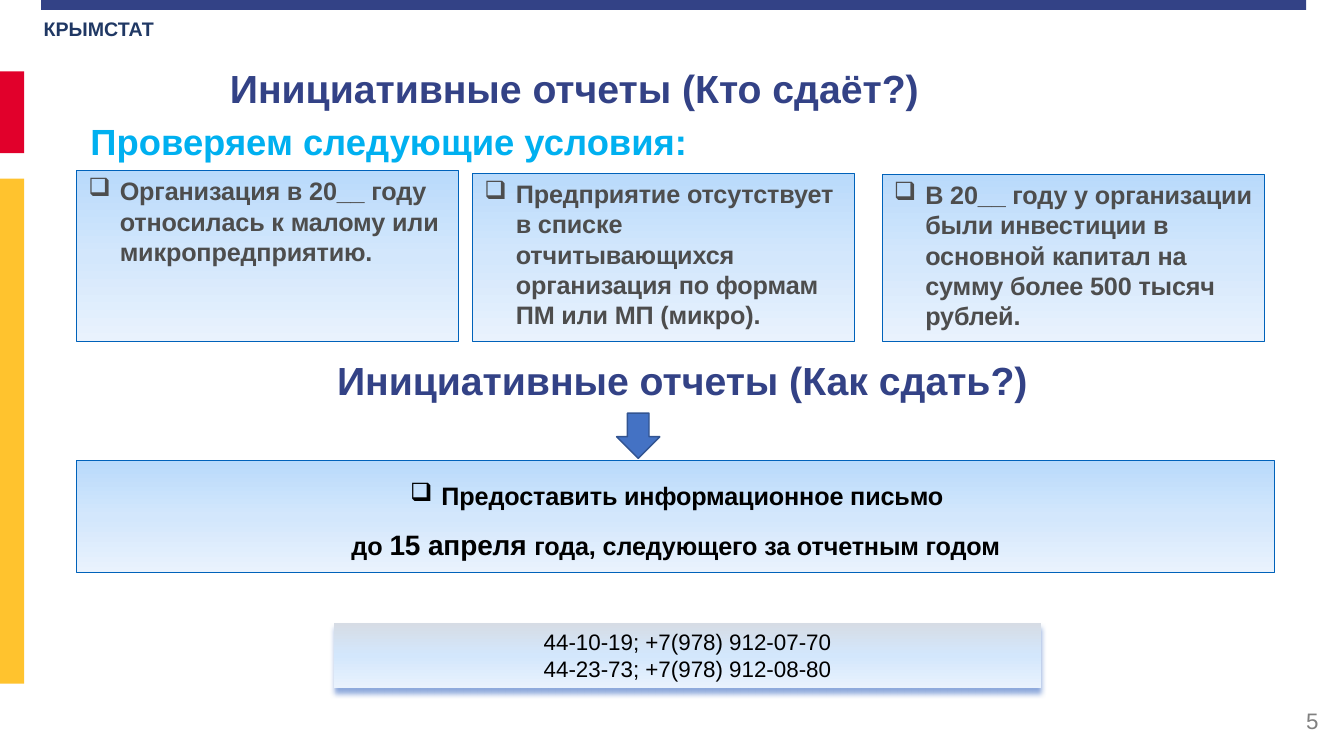
from copy import deepcopy

from pptx import Presentation
from pptx import util as u
from pptx.dml.color import RGBColor
from pptx.enum import shapes, text
from pptx.oxml import parse_xml
from pptx.oxml.ns import nsdecls, qn

NAVY, CARD = "334286", ("B9DAFB", "D3E7FC", "E9F2FD")
CONDITIONS = [
    (1.93, 4.3, "Организация в 20__ году относилась к малому или микропредприятию."),
    (11.91, 4.37, "Предприятие отсутствует в списке отчитывающихся "
                  "организация по формам ПМ или МП (микро)."),
    (22.23, 4.4, "В 20__ году у организации были инвестиции в основной капитал "
                 "на сумму более 500 тысяч рублей."),
]
CARD_WIDTH, CARD_BOTTOM = 9.63, 8.6


def rgb(code):
    """Return the colour for a hex string."""
    return RGBColor.from_string(code)


def place(box):
    """Turn a left, top, width, height box in centimetres into lengths."""
    return [u.Cm(length) for length in box]


def style(font, size, color, bold=True):
    """Set the common Arial look on a font."""
    font.name, font.size, font.bold = "Arial", u.Pt(size), bold
    font.color.rgb = rgb(color)


def write(frame, lines, size, color, bold=True, align=text.PP_ALIGN.LEFT,
          anchor=text.MSO_ANCHOR.TOP):
    """Fill a text frame with equally styled lines."""
    frame.word_wrap = True
    frame.auto_size = text.MSO_AUTO_SIZE.NONE
    frame.vertical_anchor = anchor
    frame.text = "\n".join(lines)
    for line in frame.paragraphs:
        line.alignment = align
        style(line.font, size, color, bold)


def add_block(slide, box, fill, kind=shapes.MSO_SHAPE.RECTANGLE, line=None, width=0.75):
    """Add a shape with a plain colour or a three-stop downward gradient."""
    block = slide.shapes.add_shape(kind, *place(box))
    block.shadow.inherit = False
    if isinstance(fill, str):
        block.fill.solid()
        block.fill.fore_color.rgb = rgb(fill)
    else:
        block.fill.gradient()
        block.fill.gradient_angle = 270
        stops = block._element.spPr.find(qn("a:gradFill")).find(qn("a:gsLst"))
        stops.insert(1, deepcopy(stops[0]))
        for stop, color, position in zip(block.fill.gradient_stops, fill, (0, 0.5, 1)):
            stop.color.rgb, stop.position = rgb(color), position
    if line:
        block.line.color.rgb = rgb(line)
        block.line.width = u.Pt(width)
    else:
        block.line.fill.background()
    return block


def add_label(slide, box, words, size, color, **options):
    """Add a one-line text box."""
    label = slide.shapes.add_textbox(*place(box))
    write(label.text_frame, [words], size, color, **options)


def add_bullet(paragraph):
    """Give a paragraph a checkbox bullet with a hanging indent."""
    properties = paragraph._p.get_or_add_pPr()
    properties.set("marL", str(u.Cm(0.84)))
    properties.set("indent", str(u.Cm(-0.79)))
    properties.insert_element_before(
        parse_xml(f'<a:buChar {nsdecls("a")} char="❑"/>'),
        "a:tabLst", "a:defRPr", "a:extLst")


def tighten(paragraph):
    """Draw the letters of a paragraph slightly together."""
    for run in paragraph.runs:
        run._r.get_or_add_rPr().set("spc", "-10")


def add_frame(slide):
    """Draw the page edge bars and the agency name."""
    add_block(slide, (1.04, 0, 31.88, 0.25), NAVY)
    add_block(slide, (0, 1.8, 0.61, 2.06), "E1002B")
    add_block(slide, (0, 4.5, 0.61, 12.73), "FFC32E")
    agency = add_block(slide, (0.84, 0.41, 3.3, 0.61), "FFFFFF")
    write(agency.text_frame, ["КРЫМСТАТ"], 14, "203864",
          align=text.PP_ALIGN.CENTER, anchor=text.MSO_ANCHOR.MIDDLE)
    add_label(slide, (25.86, 17.65, 7.62, 1.02), "5", 16, "808080", bold=False,
              align=text.PP_ALIGN.RIGHT, anchor=text.MSO_ANCHOR.MIDDLE)


def add_title(slide, box):
    """Move and fill the title placeholder."""
    title = slide.shapes.title
    title.left, title.top, title.width, title.height = place(box)
    write(title.text_frame, ["Инициативные отчеты (Кто сдаёт?)"], 28, NAVY,
          align=text.PP_ALIGN.CENTER)


def add_condition(slide, box, words):
    """Add one card with a reporting condition."""
    card = add_block(slide, box, CARD, line="0062BA")
    write(card.text_frame, [words], 18, "4D4D4D")
    condition = card.text_frame.paragraphs[0]
    add_bullet(condition)
    tighten(condition)


def add_letter(slide, box):
    """Add the wide box about the information letter and its deadline."""
    letter = add_block(slide, box, CARD, line="0062BA")
    write(letter.text_frame, ["Предоставить информационное письмо", "до "], 18, "000000",
          align=text.PP_ALIGN.CENTER)
    task, deadline = letter.text_frame.paragraphs
    add_bullet(task)
    date = deadline.add_run()
    date.text, date.font.size = "15 апреля ", u.Pt(20)
    deadline.add_run().text = "года, следующего за отчетным годом"
    for line in (task, deadline):
        line.line_spacing = 1.5
        tighten(line)


def add_phones(slide, box):
    """Add the contact numbers on a plate with a soft shadow."""
    phones = add_block(slide, box, ("D6DCE5", "D3E7FC", "E9F2FD"))
    phones._element.spPr.find(qn("a:effectLst")).append(parse_xml(
        f'<a:outerShdw {nsdecls("a")} blurRad="{u.Pt(4)}" dist="{u.Pt(4)}" dir="5400000" '
        'algn="t" rotWithShape="0"><a:srgbClr val="8FAADC"/></a:outerShdw>'))
    write(phones.text_frame, ["44-10-19; +7(978) 912-07-70", "44-23-73; +7(978) 912-08-80"],
          16, "000000", bold=False, align=text.PP_ALIGN.CENTER)


def main():
    """Build the slide and save it."""
    deck = Presentation()
    deck.slide_width, deck.slide_height = u.Cm(33.87), u.Cm(19.05)
    slide = deck.slides.add_slide(deck.slide_layouts[5])
    add_frame(slide)
    add_title(slide, (0.81, 1.5, 27.33, 1.78))
    add_label(slide, (2.03, 2.87, 27.33, 1.37), "Проверяем следующие условия:", 26, "00B0F0")
    for left, top, words in CONDITIONS:
        add_condition(slide, (left, top, CARD_WIDTH, CARD_BOTTOM - top), words)
    add_label(slide, (3.53, 8.86, 27.33, 1.78), "Инициативные отчеты (Как сдать?)", 28, NAVY,
              align=text.PP_ALIGN.CENTER)
    add_block(slide, (15.54, 10.41, 1.09, 1.14), "4472C4",
              shapes.MSO_SHAPE.DOWN_ARROW, "325491", 1)
    add_letter(slide, (1.93, 11.61, 30.2, 2.82))
    add_phones(slide, (8.41, 15.7, 17.83, 1.63))
    deck.save("out.pptx")


if __name__ == "__main__":
    main()
